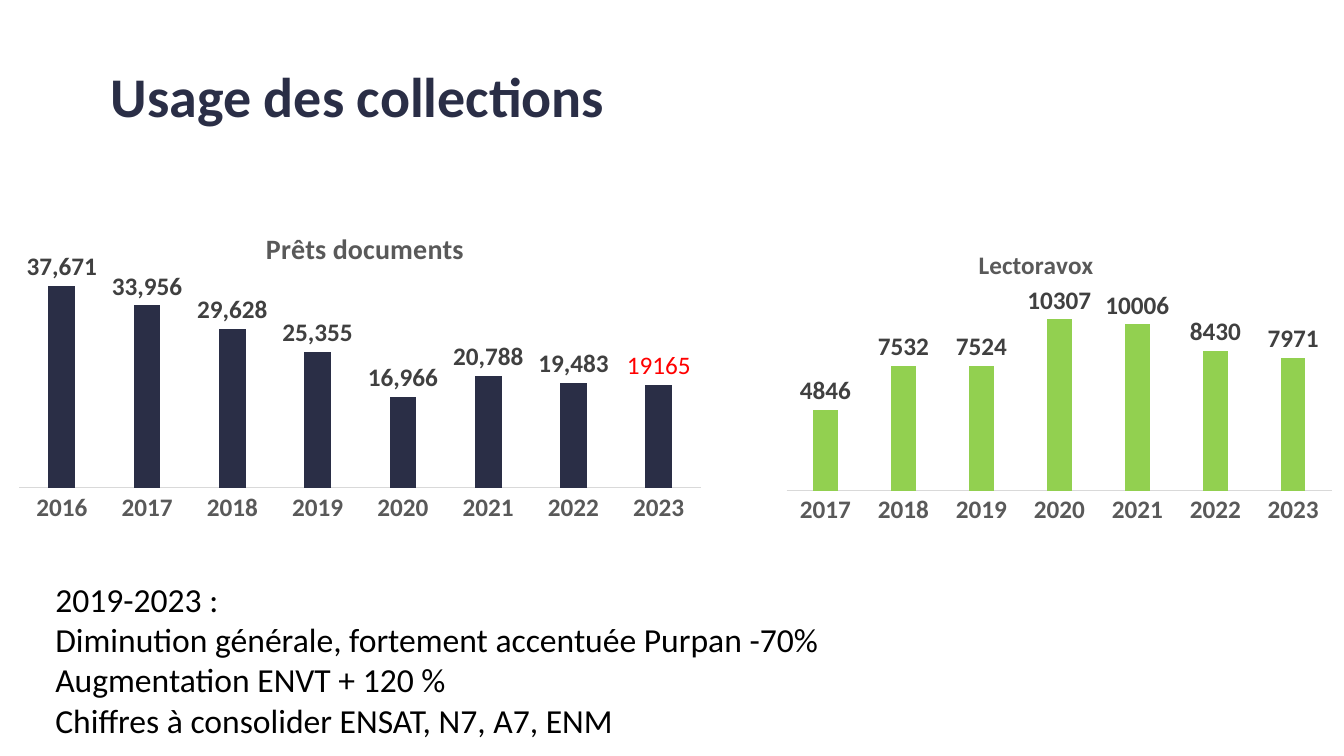
from lxml import etree
from pptx import Presentation
from pptx.chart.data import CategoryChartData
from pptx.dml.color import RGBColor
from pptx.enum import chart as chart_enum, text as text_enum
from pptx.oxml import ns
from pptx.util import Pt

FONT = "Calibri"
NAVY = RGBColor(0x2A, 0x2E, 0x46)
GREEN = RGBColor(0x92, 0xD0, 0x50)
RED = RGBColor(0xFF, 0x00, 0x00)
BLACK = RGBColor(0x00, 0x00, 0x00)
DARK_GREY = RGBColor(0x40, 0x40, 0x40)
GREY = RGBColor(0x59, 0x59, 0x59)
LIGHT_GREY = RGBColor(0xD9, 0xD9, 0xD9)

TITLE = "Usage des collections"
NOTES = [
    "2019-2023 :",
    "Diminution générale, fortement accentuée Purpan -70%",
    "Augmentation ENVT + 120 %",
    "Chiffres à consolider ENSAT, N7, A7, ENM",
]
CHARTS = [
    {
        "title": "Prêts documents", "title_size": 20, "title_at": (0.36, 0.06),
        "box": (3.6, 146.2, 507.6, 232.6), "color": NAVY,
        "first_year": 2016, "maximum": 40000, "number_format": "#,##0",
        "values": [37671, 33956, 29628, 25355, 16966, 20788, 19483, 19165],
        "red_labels": {7: "19165"},
    },
    {
        "title": "Lectoravox", "title_size": 18, "title_at": (0.35, 0.05),
        "box": (553.7, 162.7, 406.1, 216), "color": GREEN,
        "first_year": 2017, "maximum": 12000, "number_format": "General",
        "values": [4846, 7532, 7524, 10307, 10006, 8430, 7971],
        "red_labels": {},
    },
]
PLOT_AREA = {"x": 0.02, "y": 0.21, "w": 0.96, "h": 0.66}


def style_font(font, size, color, bold=False):
    font.name, font.size, font.bold = FONT, Pt(size), bold
    font.color.rgb = color


def add_text(slide, box, lines, size, color, bold=False,
             anchor=text_enum.MSO_ANCHOR.TOP, line_spacing=None):
    frame = slide.shapes.add_textbox(*map(Pt, box)).text_frame
    frame.word_wrap = True
    frame.vertical_anchor = anchor
    for index, line in enumerate(lines):
        paragraph = frame.paragraphs[0] if index == 0 else frame.add_paragraph()
        paragraph.line_spacing = line_spacing
        run = paragraph.add_run()
        run.text = line
        style_font(run.font, size, color, bold)


def set_layout(parent, position, inner=False):
    """Place a chart title or plot area at fractions of the chart."""
    for old in parent.findall(ns.qn("c:layout")):
        parent.remove(old)
    layout = etree.Element(ns.qn("c:layout"))
    manual = etree.SubElement(layout, ns.qn("c:manualLayout"))
    if inner:
        etree.SubElement(manual, ns.qn("c:layoutTarget"), val="inner")
    for axis in "xy":
        etree.SubElement(manual, ns.qn(f"c:{axis}Mode"), val="edge")
    for key, fraction in position.items():
        etree.SubElement(manual, ns.qn(f"c:{key}"), val=str(fraction))
    text = parent.find(ns.qn("c:tx"))
    if text is None:
        parent.insert(0, layout)
    else:
        text.addnext(layout)


def add_column_chart(slide, item):
    data = CategoryChartData(number_format=item["number_format"])
    data.categories = [str(item["first_year"] + i) for i in range(len(item["values"]))]
    data.add_series(item["title"], item["values"])
    chart = slide.shapes.add_chart(
        chart_enum.XL_CHART_TYPE.COLUMN_CLUSTERED, *map(Pt, item["box"]), data).chart
    style_font(chart.font, 10, BLACK)
    chart.has_legend = False

    run = chart.chart_title.text_frame.paragraphs[0].add_run()
    run.text = item["title"]
    style_font(run.font, item["title_size"], GREY, True)
    chart.chart_title.include_in_layout = False
    title_element = chart.element.find(".//" + ns.qn("c:title"))
    set_layout(title_element, dict(zip("xy", item["title_at"])))
    set_layout(chart.element.find(".//" + ns.qn("c:plotArea")), PLOT_AREA, inner=True)

    years = chart.category_axis
    years.major_tick_mark = chart_enum.XL_TICK_MARK.NONE
    years.format.line.color.rgb = LIGHT_GREY
    years.format.line.width = Pt(0.75)
    style_font(years.tick_labels.font, 18, GREY, True)
    scale = chart.value_axis
    scale.minimum_scale, scale.maximum_scale = 0, item["maximum"]
    scale.has_major_gridlines = False
    scale.visible = False

    plot = chart.plots[0]
    plot.gap_width, plot.overlap = 219, -27
    plot.vary_by_categories = False
    series = plot.series[0]
    series.format.fill.solid()
    series.format.fill.fore_color.rgb = item["color"]
    labels = series.data_labels
    labels.show_value = True
    labels.position = chart_enum.XL_LABEL_POSITION.OUTSIDE_END
    labels.number_format = item["number_format"]
    labels.number_format_is_linked = False
    style_font(labels.font, 18, DARK_GREY, True)
    for index, label_text in item["red_labels"].items():
        label = series.points[index].data_label
        label_run = label.text_frame.paragraphs[0].add_run()
        label_run.text = label_text
        style_font(label_run.font, 18, RED)
        label.position = chart_enum.XL_LABEL_POSITION.OUTSIDE_END


def main():
    presentation = Presentation()
    presentation.slide_width, presentation.slide_height = Pt(960), Pt(540)
    slide = presentation.slides.add_slide(presentation.slide_layouts[6])
    add_text(slide, (72, 18.7, 828, 104.4), [TITLE], 40, NAVY, True,
             text_enum.MSO_ANCHOR.MIDDLE, 0.9)
    for item in CHARTS:
        add_column_chart(slide, item)
    add_text(slide, (32.4, 409.7, 574.6, 123.8), NOTES, 24, BLACK)
    presentation.save("out.pptx")


if __name__ == "__main__":
    main()
